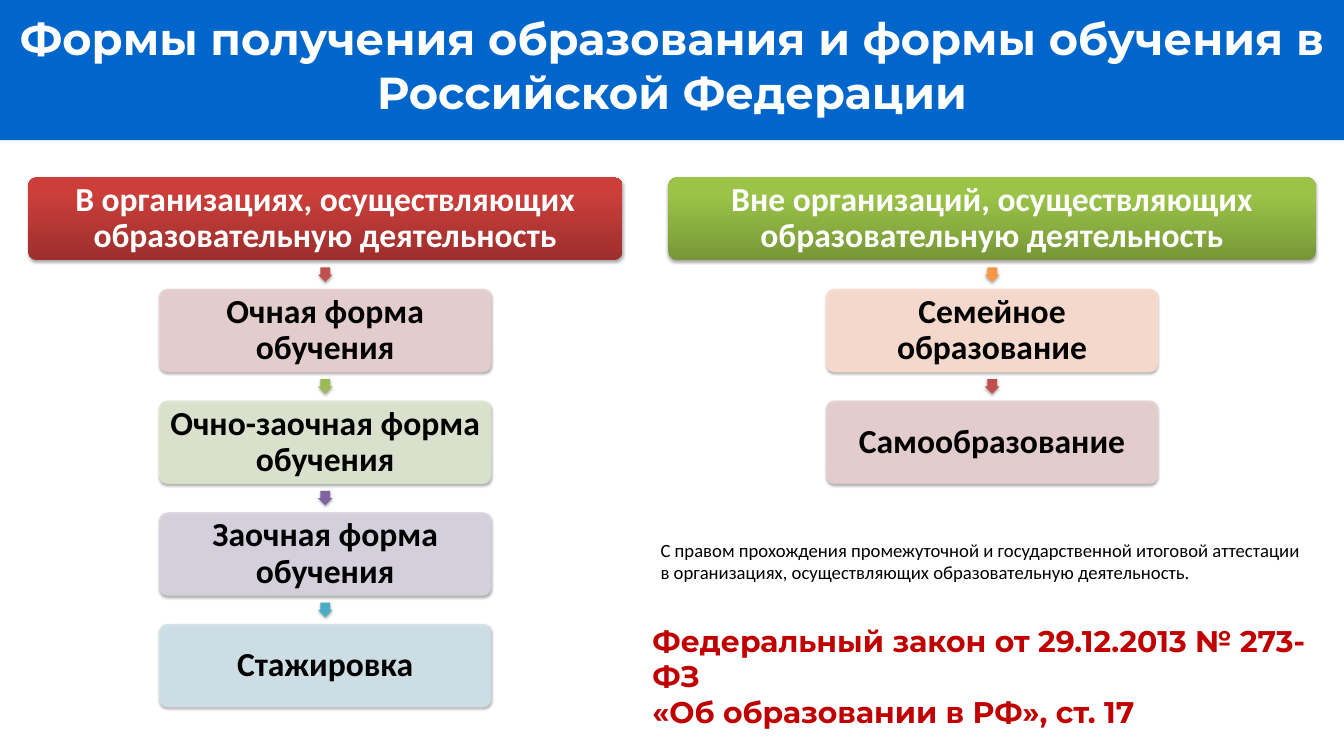
"""Build a slide on the forms of education in the Russian Federation."""
from dataclasses import dataclass

from lxml import etree
from pptx import Presentation
from pptx.dml.color import RGBColor
from pptx.enum import shapes, text
from pptx.oxml import ns
from pptx.util import Pt


@dataclass(frozen=True)
class Theme:
    head: str = "Montserrat"
    body: str = "Calibri"
    blue: str = "0066CC"
    white: str = "FFFFFF"
    black: str = "000000"
    law: str = "C00000"
    title: int = 48
    box: int = 36
    legal: int = 32
    note: int = 20


theme = Theme()
rgb = RGBColor.from_string


def write(shape, lines, font, size, color, bold, align, anchor, pad):
    frame = shape.text_frame
    frame.text = "\n".join(lines)
    frame.word_wrap = True
    frame.auto_size = text.MSO_AUTO_SIZE.NONE
    frame.vertical_anchor = anchor
    frame.margin_left = frame.margin_right = Pt(pad[0])
    frame.margin_top = frame.margin_bottom = Pt(pad[1])
    for para in frame.paragraphs:
        para.alignment = align
        for run in para.runs:
            run.font.name = font
            run.font.size = Pt(size)
            run.font.bold = bold
            run.font.color.rgb = rgb(color)


def shade(shape):
    shape.shadow.inherit = False
    effects = shape._element.spPr.find(ns.qn("a:effectLst"))
    shadow = etree.SubElement(
        effects, ns.qn("a:outerShdw"), blurRad=str(Pt(3.1)),
        dist=str(Pt(1.8)), dir="5400000", rotWithShape="0")
    color = etree.SubElement(shadow, ns.qn("a:srgbClr"), val=theme.black)
    etree.SubElement(color, ns.qn("a:alpha"), val="35000")


columns = [
    (348.5, 636.5, "9C2F2D", "CB3E3A",
     "В организациях, осуществляющих образовательную деятельность",
     [("Очная форма обучения", "E8D0D0", "C0504D"),
      ("Очно-заочная форма обучения", "DEE7D1", "9BBB59"),
      ("Заочная форма обучения", "D8D3E0", "8064A2"),
      ("Стажировка", "D0E3EA", "4BACC6")]),
    (1063, 693.4, "779737", "9BC348",
     "Вне организаций, осуществляющих образовательную деятельность",
     [("Семейное образование", "FCDDCF", "F79646"),
      ("Самообразование", "E8D0D0", "C0504D")]),
]
top, step, wide, high, tip = 190.2, 119.7, 355, 88.6, 15.6

deck = Presentation()
deck.slide_width, deck.slide_height = Pt(1440), Pt(810)
slide = deck.slides.add_slide(deck.slide_layouts[5])
left, center = text.PP_ALIGN.LEFT, text.PP_ALIGN.CENTER
upper, middle = text.MSO_ANCHOR.TOP, text.MSO_ANCHOR.MIDDLE

title = slide.shapes.title
title.left, title.top, title.width, title.height = Pt(0), Pt(0), Pt(1440), Pt(150.2)
title.fill.solid()
title.fill.fore_color.rgb = rgb(theme.blue)
write(title, ["Формы получения образования и формы обучения в", "Российской Федерации"],
      theme.head, theme.title, theme.white, True, center, upper, (0, 12))

for mid, span, dark, light, head, forms in columns:
    for row, (words, tint, hue) in enumerate([(head, None, None)] + forms):
        width = wide if row else span
        y = top + row * step
        box = slide.shapes.add_shape(
            shapes.MSO_SHAPE.ROUNDED_RECTANGLE,
            Pt(mid - width / 2), Pt(y), Pt(width), Pt(high))
        box.adjustments[0] = 0.1
        if row:
            box.fill.solid()
            box.fill.fore_color.rgb = rgb(tint)
            box.line.color.rgb = rgb(tint)
            box.line.width = Pt(0.75)
            for color in box._element.spPr.iter(ns.qn("a:srgbClr")):
                etree.SubElement(color, ns.qn("a:alpha"), val="90000")
        else:
            box.fill.gradient()
            box.fill.gradient_angle = 90
            for stop, place, shade_of in zip(box.fill.gradient_stops, (0, 0.8), (dark, light)):
                stop.position = place
                stop.color.rgb = rgb(shade_of)
            box.line.fill.background()
        shade(box)
        write(box, [words], theme.body, theme.box, theme.black if row else theme.white,
              True, center, middle, (6.2, 6.2))
        box.text_frame.paragraphs[0].line_spacing = 0.9
        if row:
            arrow = slide.shapes.add_shape(
                shapes.MSO_SHAPE.RIGHT_ARROW, Pt(mid - tip / 2),
                Pt(y - (step - high + tip) / 2), Pt(tip), Pt(tip))
            arrow.rotation = 90
            arrow.adjustments[0] = 0.67
            arrow.fill.solid()
            arrow.fill.fore_color.rgb = rgb(hue)
            arrow.line.fill.background()
            shade(arrow)

law = slide.shapes.add_textbox(Pt(699), Pt(666.7), Pt(708), Pt(118))
write(law, ["Федеральный закон от 29.12.2013 № 273-ФЗ", "«Об образовании в РФ», ст. 17"],
      theme.head, theme.legal, theme.law, True, left, upper, (0, 0))

note = slide.shapes.add_textbox(Pt(700.6), Pt(573.8), Pt(708), Pt(55.4))
write(note, ["С правом прохождения промежуточной и государственной итоговой аттестации "
             "в организациях, осуществляющих образовательную деятельность."],
      theme.body, theme.note, theme.black, False, left, upper, (7.2, 3.6))

deck.save("out.pptx")
